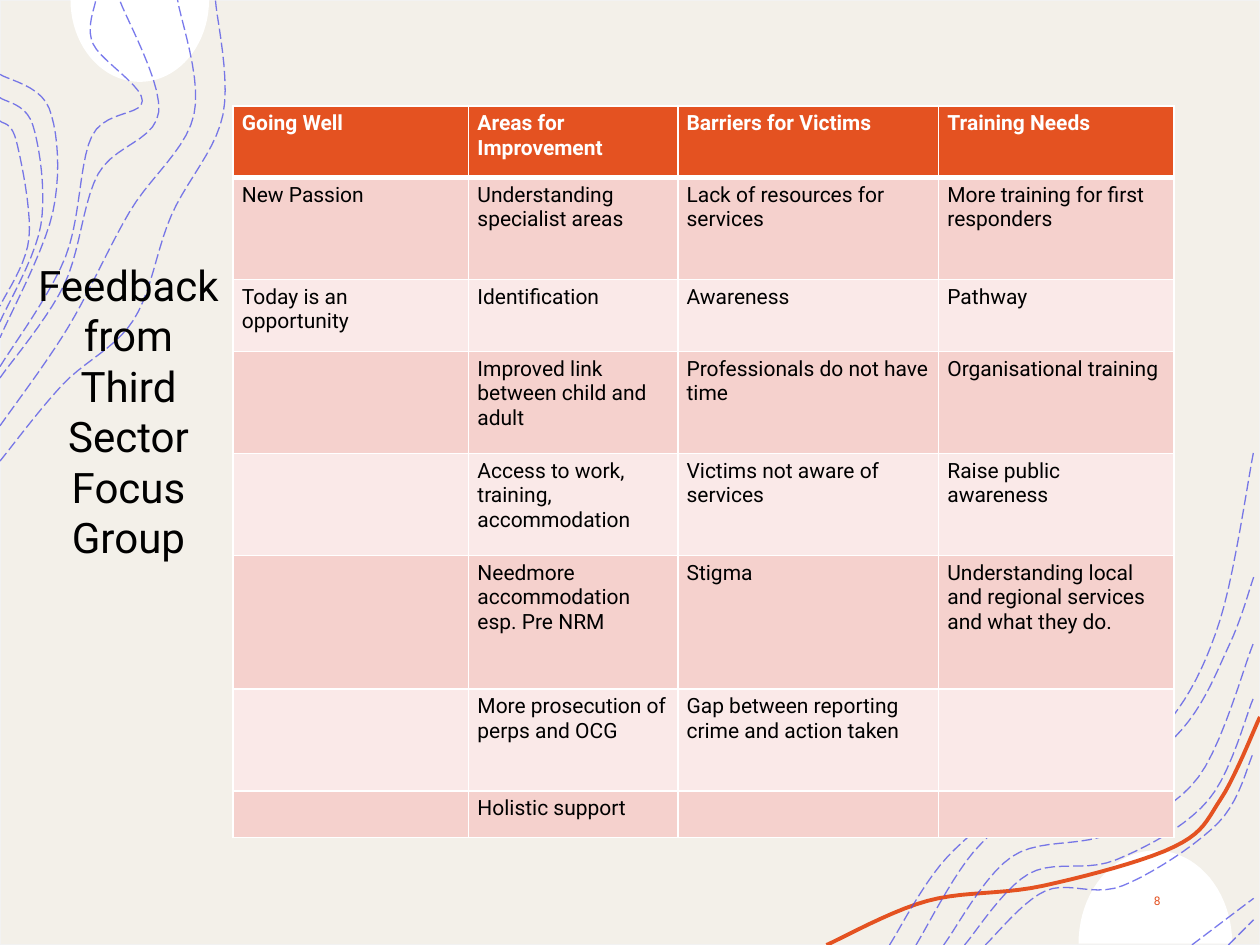
"""Build the focus group feedback slide: contour backdrop, title and feedback table."""
import math

import lxml.etree
import pptx
import pptx.dml.color
import pptx.enum.dml
import pptx.enum.shapes
import pptx.enum.text
import pptx.oxml.ns
import pptx.util

THEME = {
    "paper": "F3F0E9", "edge": "F2F2F2", "white": "FFFFFF", "ink": "000000",
    "accent": "E45221", "contour": "4D4EE6", "bands": ("F5D1CD", "FAE9E8"),
    "font": "Roboto", "title": 24, "body": 12, "number": 6.8,
    "contour_width": 0.75, "ribbon_width": 2.2, "contour_alpha": 75000,
}
SLIDE_WIDTH, SLIDE_HEIGHT = 10, 7.5

TITLE = "Feedback from Third Sector Focus Group"
PAGE_NUMBER = "8"
FEEDBACK = [
    ("Going Well", "Areas for Improvement", "Barriers for Victims", "Training Needs"),
    ("New Passion", "Understanding specialist areas", "Lack of resources for services",
     "More training for first responders"),
    ("Today is an opportunity", "Identification", "Awareness", "Pathway"),
    ("", "Improved link between child and adult", "Professionals do not have time",
     "Organisational training"),
    ("", "Access to work, training, accommodation", "Victims not aware of services",
     "Raise public awareness"),
    ("", "Needmore accommodation esp. Pre NRM", "Stigma",
     "Understanding local and regional services and what they do."),
    ("", "More prosecution of perps and OCG",
     "Gap between reporting crime and action taken", ""),
    ("", "Holistic support", "", ""),
]
COLUMN_WIDTHS = [1.87, 1.66, 2.07, 1.87]
ROW_HEIGHTS = [0.57, 0.81, 0.57, 0.81, 0.81, 1.06, 0.81, 0.37]
TABLE_LEFT, TABLE_TOP = 1.85, 0.84

HALF_MOONS = [(1.11, 0, 0.55, 0.65), (9.17, 7.49, 0.61, -0.74)]
RIBBON = [(6.56, 7.5), (7.36, 7.15), (8.28, 7.03), (9.32, 6.72), (9.69, 6.34), (10, 5.69)]
CONTOUR_FAMILIES = [
    (1, [(0, 3.66), (0.5, 3.05), (1.06, 2.54), (1.36, 1.71), (1.77, 0.91), (1.71, 0)]),
    (1, [(0, 3.38), (0.54, 2.6), (1.03, 1.68), (1.54, 0.91), (1.41, 0)]),
    (1, [(0, 3), (0.51, 2.26), (0.78, 1.38), (1.26, 0.89), (0.95, 0)]),
    (1, [(0, 2.91), (0.52, 2.04), (0.73, 1.08), (1.13, 0.8), (0.74, 0.35), (0.76, 0)]),
    (3, [(0, 0.59), (0.39, 0.86), (0.42, 1.68), (0, 2.68)],
        [(0, 0.96), (0.13, 1.12), (0.23, 1.89), (0, 2.43)]),
    (2, [(7.06, 7.5), (7.52, 6.8), (8.23, 6.25), (8.58, 6.27), (9.25, 5.76), (9.68, 4.93),
         (9.95, 3.58)],
        [(7.27, 7.5), (7.72, 6.77), (8.23, 6.37), (8.64, 6.39), (9.38, 5.79), (9.76, 5.11),
         (9.95, 4.58)]),
    (3, [(7.49, 7.5), (8.03, 6.8), (8.8, 6.62), (9.51, 6.17), (9.95, 5.1)],
        [(7.82, 7.5), (8.3, 7.07), (8.91, 7.03), (9.67, 6.53), (9.95, 5.97)]),
    (2, [(9.46, 7.5), (9.95, 7.13)], [(9.75, 7.5), (9.95, 7.3)]),
]


def rgb(code):
    return pptx.dml.color.RGBColor.from_string(code)


def inches(*lengths):
    return [pptx.util.Inches(length) for length in lengths]


def spline(stops, steps=10):
    padded = [stops[0], *stops, stops[-1]]
    curve = [stops[0]]
    for a, b, c, d in zip(padded, padded[1:], padded[2:], padded[3:]):
        for step in range(1, steps + 1):
            t = step / steps
            curve.append(tuple(
                q + t / 2 * (r - p + t * (2 * p - 5 * q + 4 * r - s + t * (3 * (q - r) + s - p)))
                for p, q, r, s in zip(a, b, c, d)))
    return curve


def blend(count, outer, inner=None):
    inner = inner or outer
    for member in range(count):
        share = member / max(count - 1, 1)
        yield [tuple(p + share * (q - p) for p, q in zip(a, b)) for a, b in zip(outer, inner)]


def half_ellipse(x, y, across, down, steps=40):
    angles = [math.pi * step / steps for step in range(steps + 1)]
    return [(x + across * math.cos(angle), y + down * math.sin(angle)) for angle in angles]


def draw_outline(slide, outline, close):
    corners = [inches(*corner) for corner in outline]
    builder = slide.shapes.build_freeform(*corners[0])
    builder.add_line_segments(corners[1:], close=close)
    shape = builder.convert_to_shape()
    shape.shadow.inherit = False
    return shape


def draw_curve(slide, stops, color, width):
    curve = draw_outline(slide, spline(stops), close=False)
    curve.fill.background()
    curve.line.color.rgb = rgb(color)
    curve.line.width = pptx.util.Pt(width)
    return curve


def add_backdrop(slide):
    paper = slide.shapes.add_shape(pptx.enum.shapes.MSO_SHAPE.RECTANGLE,
                                   *inches(0, 0, SLIDE_WIDTH, SLIDE_HEIGHT))
    paper.shadow.inherit = False
    paper.fill.solid()
    paper.fill.fore_color.rgb = rgb(THEME["paper"])
    paper.line.color.rgb = rgb(THEME["edge"])
    paper.line.width = pptx.util.Pt(1)
    for moon_geometry in HALF_MOONS:
        moon = draw_outline(slide, half_ellipse(*moon_geometry), close=True)
        moon.fill.solid()
        moon.fill.fore_color.rgb = rgb(THEME["white"])
        moon.line.fill.background()
    draw_curve(slide, RIBBON, THEME["accent"], THEME["ribbon_width"])
    for family in CONTOUR_FAMILIES:
        for stops in blend(*family):
            contour = draw_curve(slide, stops, THEME["contour"], THEME["contour_width"])
            contour.line.dash_style = pptx.enum.dml.MSO_LINE.LONG_DASH
            ink = next(contour.line._ln.iter(pptx.oxml.ns.qn("a:srgbClr")))
            lxml.etree.SubElement(ink, pptx.oxml.ns.qn("a:alpha"),
                                  val=str(THEME["contour_alpha"]))


def write(frame, words, size, color, bold=False, align=None):
    frame.word_wrap = True
    paragraph = frame.paragraphs[0]
    paragraph.text = words
    paragraph.alignment = align
    paragraph.font.name = THEME["font"]
    paragraph.font.size = pptx.util.Pt(size)
    paragraph.font.bold = bold
    paragraph.font.color.rgb = rgb(color)


def add_borders(cell, **widths):
    properties = cell._tc.get_or_add_tcPr()
    for side in "LRTB":
        border = lxml.etree.SubElement(properties, pptx.oxml.ns.qn("a:ln" + side),
                                       w=str(int(pptx.util.Pt(widths.get(side, 1)))))
        fill = lxml.etree.SubElement(border, pptx.oxml.ns.qn("a:solidFill"))
        lxml.etree.SubElement(fill, pptx.oxml.ns.qn("a:srgbClr"), val=THEME["white"])


def add_feedback(slide):
    table = slide.shapes.add_table(
        len(ROW_HEIGHTS), len(COLUMN_WIDTHS),
        *inches(TABLE_LEFT, TABLE_TOP, sum(COLUMN_WIDTHS), sum(ROW_HEIGHTS))).table
    for column, width in zip(table.columns, COLUMN_WIDTHS):
        column.width = pptx.util.Inches(width)
    for index, (row, height, answers) in enumerate(zip(table.rows, ROW_HEIGHTS, FEEDBACK)):
        row.height = pptx.util.Inches(height)
        heading = index == 0
        rule = {0: {"B": 3}, 1: {"T": 3}}.get(index, {})
        for cell, answer in zip(row.cells, answers):
            cell.margin_left = cell.margin_right = pptx.util.Inches(0.07)
            cell.margin_top = cell.margin_bottom = pptx.util.Inches(0.04)
            add_borders(cell, **rule)
            cell.fill.solid()
            cell.fill.fore_color.rgb = rgb(
                THEME["accent"] if heading else THEME["bands"][(index - 1) % 2])
            write(cell.text_frame, answer, THEME["body"],
                  THEME["white"] if heading else THEME["ink"], bold=heading)


def main():
    deck = pptx.Presentation()
    deck.slide_width, deck.slide_height = inches(SLIDE_WIDTH, SLIDE_HEIGHT)
    slide = deck.slides.add_slide(deck.slide_layouts[6])
    add_backdrop(slide)
    add_feedback(slide)
    title = slide.shapes.add_textbox(*inches(0.19, 2.01, 1.66, 2.52)).text_frame
    write(title, TITLE, THEME["title"], THEME["ink"], align=pptx.enum.text.PP_ALIGN.CENTER)
    number = slide.shapes.add_textbox(*inches(8.12, 6.95, 1.19, 0.4)).text_frame
    number.vertical_anchor = pptx.enum.text.MSO_ANCHOR.MIDDLE
    write(number, PAGE_NUMBER, THEME["number"], THEME["accent"],
          align=pptx.enum.text.PP_ALIGN.RIGHT)
    deck.save("out.pptx")


if __name__ == "__main__":
    main()
